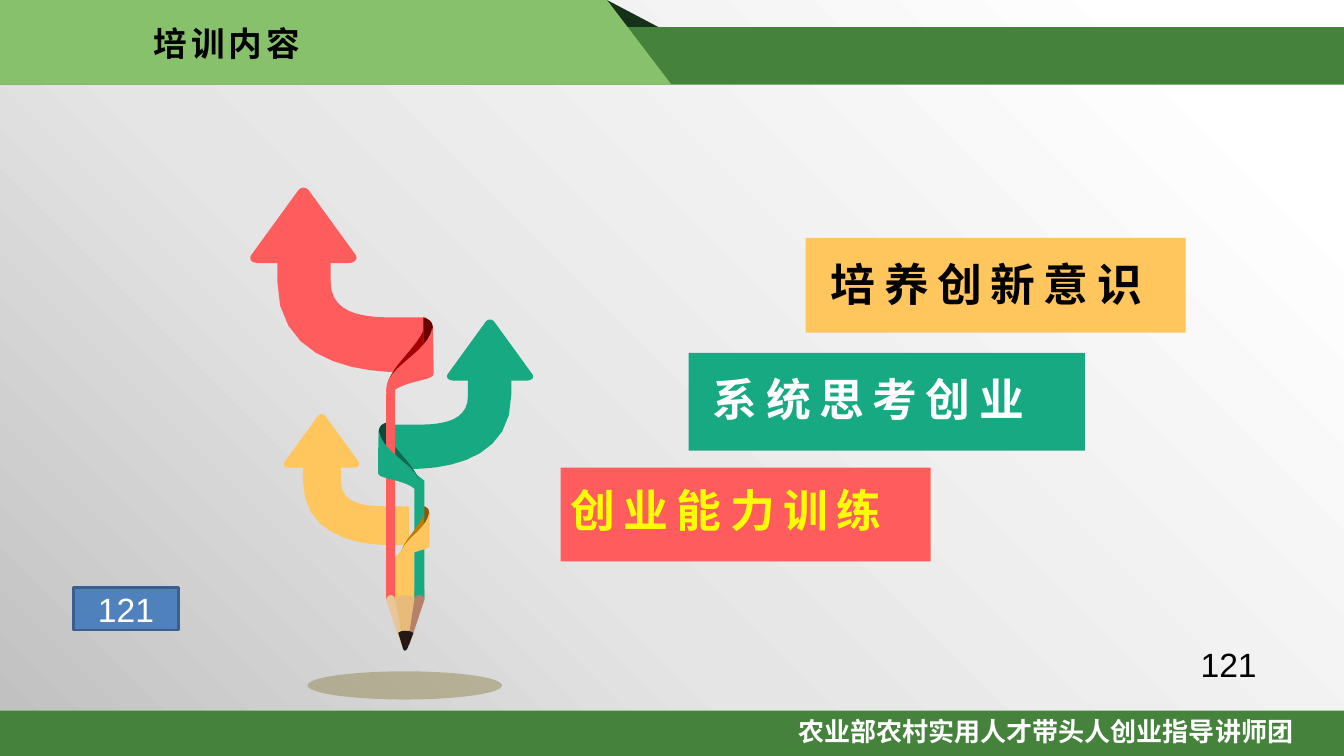
from copy import deepcopy

from lxml import etree
from pptx import Presentation
from pptx import util as u
from pptx.dml.color import RGBColor
from pptx.enum import shapes, text
from pptx.oxml.ns import qn

WIDTH, HEIGHT = 13.33, 7.5
SANS, ARIAL = "Noto Sans CJK SC", "Arial"

BLACK, WHITE = RGBColor.from_string("000000"), RGBColor.from_string("FFFFFF")
SILVER, GREY = RGBColor.from_string("E5E5E5"), RGBColor.from_string("BFBFBF")
YELLOW = RGBColor.from_string("FFFF00")
DARK_GREEN, LIGHT_GREEN = RGBColor.from_string("45823C"), RGBColor.from_string("88C16B")
FOLD_GREEN = RGBColor.from_string("153118")
RED, RED_FOLD, RED_BACK = map(RGBColor.from_string, ("FF5C5D", "A40000", "680000"))
TEAL, TEAL_FOLD, TEAL_BACK = map(RGBColor.from_string, ("17A982", "0E6850", "0A4A39"))
GOLD, GOLD_FOLD, GOLD_BACK = map(RGBColor.from_string, ("FFC65D", "C07B00", "945406"))
WOOD_LIGHT, WOOD, WOOD_DARK = map(RGBColor.from_string, ("E9C697", "E9BB7A", "B68168"))
LEAD, GROUND = RGBColor.from_string("231815"), RGBColor.from_string("948A54")
BADGE, BADGE_LINE = RGBColor.from_string("4F81BD"), RGBColor.from_string("3A5F8C")
BACKDROP = [(0.09, WHITE), (0.62, SILVER), (1, GREY)]

TITLE = "培训内容"
FOOTER = "农业部农村实用人才带头人创业指导讲师团"
PAGE = "121"

# words, left, width, height, fill, text colour, inset
TOPICS = [
    ("培养创新意识", 7.99, 3.77, 0.94, GOLD, BLACK, (0.25, 0.19)),
    ("系统思考创业", 6.83, 3.93, 0.97, TEAL, WHITE, (0.24, 0.19)),
    ("创业能力训练", 5.56, 3.67, 0.93, RED, YELLOW, (0.1, 0.15)),
]
TOPIC_TOP, TOPIC_STEP = 2.36, 1.14

# Outlines in inches: two numbers are a corner, six are a Bézier curve
HEAD = [(0.44, 0.76), (0.51, 0.76, 0.55, 0.72, 0.51, 0.67), (0.06, 0.05),
        (0.03, 0, -0.03, 0, -0.06, 0.05), (-0.51, 0.67), (-0.55, 0.72, -0.52, 0.76, -0.44, 0.76)]
TAIL = [(1.22, 1.83), (1.22, 1.83, -0.26, 2.02, -0.26, 0.94), (-0.26, 0.7), (0.27, 0.7),
        (0.27, 0.95), (0.27, 1.3, 0.68, 1.3, 0.94, 1.3), (1.22, 1.3)]
BACK = [(0, 0.3), (0, 0), (0.17, 0.04, 0.07, 0.23, 0, 0.3)]
FOLD = [(0, 0.56), (0, 0.13), (-0.08, 0.31, -0.33, 0.5, -0.36, 0.67), (-0.36, 0.69),
        (-0.29, 0.64), (-0.2, 0.56, -0.06, 0.59, 0, 0.56)]
FRONT = [(-0.37, 0.72), (-0.36, 0.81), (-0.29, 0.62, 0.1, 0.64, 0.1, 0.56),
         (0.1, 0.53, 0.1, 0.13, 0.09, 0.1), (0.04, 0.36, -0.37, 0.48, -0.37, 0.72)]
LEAD_TIP = [(3.95, 6.28), (3.98, 6.25, 4.06, 6.25, 4.1, 6.28), (4.05, 6.41),
            (4.03, 6.47, 4, 6.47, 3.99, 6.41)]

# colours of front, fold and back; arrow tip and scale; wrap corner and scale
RIBBONS = [
    (TEAL, TEAL_FOLD, TEAL_BACK, (4.86, 3.16), (-0.81, 0.81), (3.84, 4.19), (-0.9, 0.9)),
    (RED, RED_FOLD, RED_BACK, (3.01, 1.85), (1, 1), (4.2, 3.15), (1, 1)),
    (GOLD, GOLD_FOLD, GOLD_BACK, (3.19, 4.1), (0.71, 0.71), (4.2, 5.02), (0.62, 0.7)),
]

# Shaft edges, and where each runs to at the tip
EDGES, TIP_EDGES = (3.83, 3.92, 4.11, 4.21), (3.98, 4, 4.04, 4.06)
WOOD_TOP, SHAFT_END, WOOD_END = 5.85, 5.95, 6.4
FACETS = (WOOD_LIGHT, WOOD, WOOD_DARK)
RED_STRIP, GOLD_STRIP, TEAL_STRIP = (0, RED, 3.91, 3.78), (1, GOLD, 5.53, 5.32), (2, TEAL, 4.69, 4.77)


def inches(*lengths):
    return [u.Inches(length) for length in lengths]


def paint(shape, fill, line=None, opacity=100):
    shape.shadow.inherit = False
    shape.fill.solid()
    shape.fill.fore_color.rgb = fill
    if opacity < 100:
        tint = next(shape.fill._xPr.iter(qn("a:srgbClr")))
        etree.SubElement(tint, qn("a:alpha"), val=str(opacity * 1000))
    if line is None:
        shape.line.fill.background()
    else:
        shape.line.color.rgb = line
        shape.line.width = u.Pt(2)
    return shape


def block(box, fill, kind=shapes.MSO_SHAPE.RECTANGLE, **look):
    return paint(slide.shapes.add_shape(kind, *inches(*box)), fill, **look)


def flatten(outline, steps=12):
    """Turn corners and Bézier curves into a list of points."""
    points = [outline[0]]
    for segment in outline[1:]:
        if len(segment) == 2:
            points.append(segment)
            continue
        knots = [points[-1], segment[:2], segment[2:4], segment[4:]]
        for step in range(1, steps + 1):
            t = step / steps
            weights = ((1 - t) ** 3, 3 * t * (1 - t) ** 2, 3 * t * t * (1 - t), t ** 3)
            points.append(tuple(sum(w * knot[axis] for w, knot in zip(weights, knots))
                                for axis in (0, 1)))
    return points


def draw(outline, fill, origin=(0, 0), scale=(1, 1)):
    points = [tuple(round(1000 * (start + ratio * value))
                    for start, ratio, value in zip(origin, scale, point))
              for point in flatten(outline)]
    builder = slide.shapes.build_freeform(*points[0], scale=914.4)
    builder.add_line_segments(points[1:], close=True)
    return paint(builder.convert_to_shape(), fill)


def draw_strip(column, color, left_top, right_top):
    """One coloured strip of the shaft, with a scalloped lower end."""
    left, right = EDGES[column:column + 2]
    crest = SHAFT_END - 0.06
    draw([(left, left_top), (right, right_top), (right, SHAFT_END),
          (right, crest, left, crest, left, SHAFT_END)], color)


def write(shape, words, size, color, font=ARIAL, bold=False, spacing=0,
          align=text.PP_ALIGN.LEFT, anchor=text.MSO_ANCHOR.TOP, inset=(0.1, 0.05), wrap=True):
    frame = shape.text_frame
    frame.auto_size = text.MSO_AUTO_SIZE.NONE
    frame.word_wrap, frame.vertical_anchor = wrap, anchor
    frame.margin_left, frame.margin_top = inches(*inset)
    paragraph = frame.paragraphs[0]
    paragraph.alignment = align
    run = paragraph.add_run()
    run.text = words
    run.font.size, run.font.bold, run.font.name = u.Pt(size), bold, font
    run.font.color.rgb = color
    properties = run.font._rPr
    properties.set("spc", str(spacing * 100))
    etree.SubElement(properties, qn("a:ea"), typeface=font)


def label(box, words, **look):
    write(slide.shapes.add_textbox(*inches(*box)), words, **look)


def fill_background():
    fill = slide.background.fill
    fill.gradient()
    fill.gradient_angle = 225
    stops = next(slide.background._cSld.iter(qn("a:gsLst")))
    stops.append(deepcopy(stops[-1]))
    for stop, (position, color) in zip(fill.gradient_stops, BACKDROP):
        stop.position, stop.color.rgb = position, color


def draw_pencil():
    for front, fold, back, tip, size, corner, wrap in RIBBONS:
        draw(TAIL, front, tip, size)
        draw(HEAD, front, tip, size)
        draw(BACK, back, corner, wrap)
    for column, color in enumerate(FACETS):
        (left, right), (tip_left, tip_right) = (row[column:column + 2] for row in (EDGES, TIP_EDGES))
        draw([(left, WOOD_TOP), (right, WOOD_TOP), (right, SHAFT_END), (tip_right, WOOD_END),
              (tip_left, WOOD_END), (left, SHAFT_END)], color)
    draw(LEAD_TIP, LEAD)
    draw_strip(*GOLD_STRIP)
    draw_strip(*TEAL_STRIP)
    for front, fold, back, tip, size, corner, wrap in RIBBONS:
        draw(FOLD, fold, corner, wrap)
    draw_strip(*RED_STRIP)
    for front, fold, back, tip, size, corner, wrap in RIBBONS:
        draw(FRONT, front, corner, wrap)


deck = Presentation()
deck.slide_width, deck.slide_height = inches(WIDTH, HEIGHT)
slide = deck.slides.add_slide(deck.slide_layouts[5])
fill_background()

draw([(6.08, 0.81), (6.02, 0), (7.56, 0.81)], FOLD_GREEN)
block((0, 0.27, WIDTH, 0.57), DARK_GREEN)
draw([(0, 0), (6.02, 0), (6.66, 0.84), (0, 0.84)], LIGHT_GREEN)
block((0, 7.05, WIDTH, 0.45), DARK_GREEN)
label((7.82, 7.05, 5.25, 0.41), FOOTER, size=18.6, color=WHITE, bold=True, wrap=False)

title = slide.shapes.title
title.left, title.top, title.width, title.height = inches(1.42, 0.18, 3.74, 0.5)
write(title, TITLE, size=24, color=BLACK, font=SANS, bold=True, spacing=3)
title.element.getparent().append(title.element)  # bring in front of the banner

draw_pencil()
block((3.05, 6.66, 1.93, 0.28), GROUND, shapes.MSO_SHAPE.OVAL, opacity=36 + 14)

for row, (words, left, width, height, fill, color, inset) in enumerate(TOPICS):
    bar = block((left, TOPIC_TOP + row * TOPIC_STEP, width, height), fill)
    write(bar, words, size=32, color=color, font=SANS, bold=True, spacing=6, inset=inset)

label((11.81, 6.34, 0.76, 0.5), PAGE, size=24, color=BLACK, wrap=False)
badge = block((0.73, 5.83, 1.04, 0.42), BADGE, shapes.MSO_SHAPE.FLOWCHART_PROCESS, line=BADGE_LINE)
write(badge, PAGE, size=24, color=WHITE, align=text.PP_ALIGN.CENTER, anchor=text.MSO_ANCHOR.MIDDLE)

deck.save("out.pptx")
